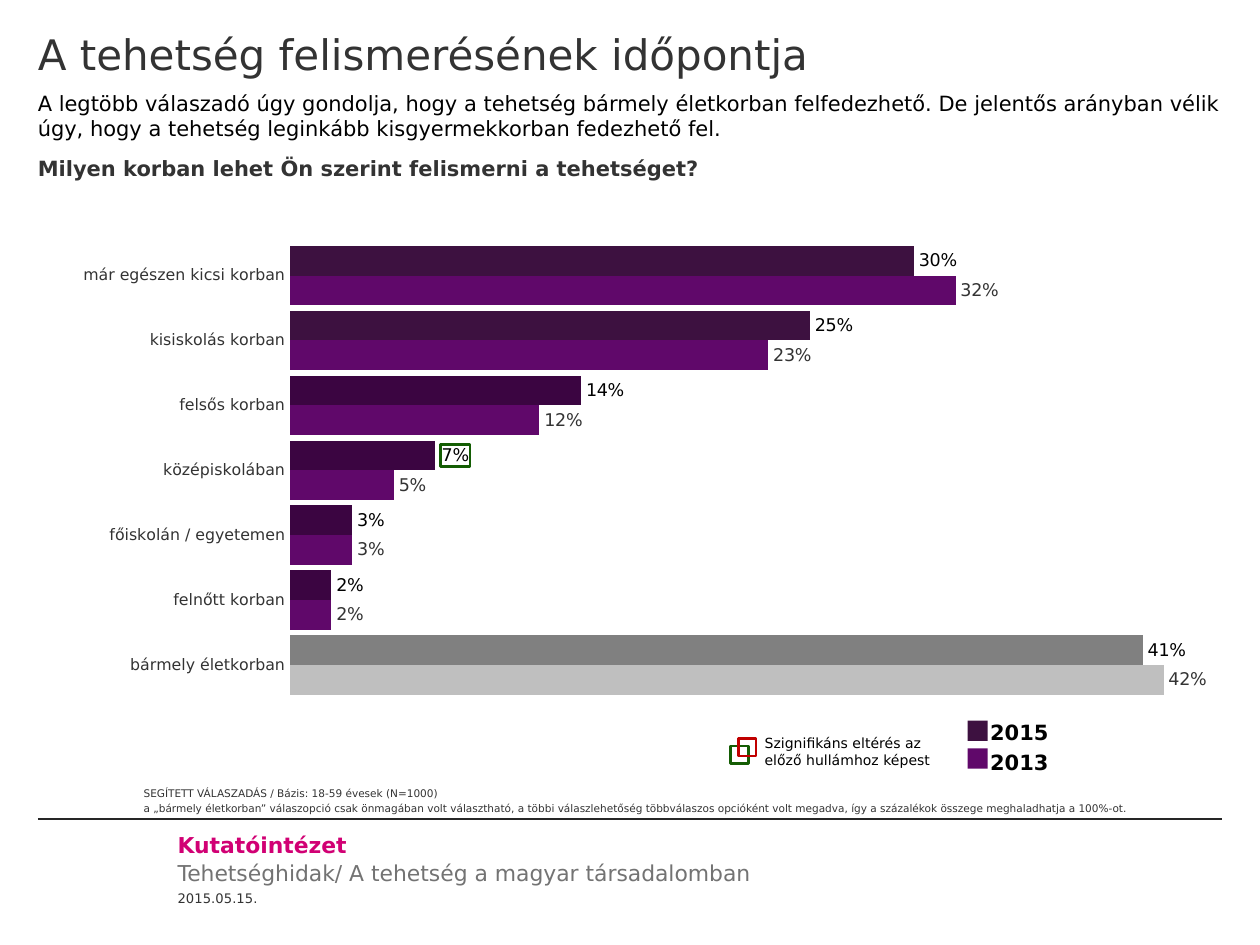
"""Build the slide on when talent can be recognised."""
import lxml.etree
import pptx
import pptx.chart.data
import pptx.dml.color
import pptx.enum.chart
import pptx.enum.shapes
import pptx.enum.text
import pptx.oxml
import pptx.oxml.ns
import pptx.util

Inches = pptx.util.Inches
RGBColor = pptx.dml.color.RGBColor
Anchor = pptx.enum.text.MSO_ANCHOR

FONT = "DejaVu Sans"
BLACK = RGBColor(0x00, 0x00, 0x00)
WHITE = RGBColor(0xFF, 0xFF, 0xFF)
DARK = RGBColor(0x33, 0x33, 0x33)
RULE = RGBColor(0x26, 0x26, 0x26)
GRAY = RGBColor(0x73, 0x73, 0x73)
PINK = RGBColor(0xD1, 0x00, 0x74)
PLUM = RGBColor(0x3D, 0x11, 0x40)
DEEP_PLUM = RGBColor(0x3B, 0x05, 0x41)
PURPLE = RGBColor(0x60, 0x08, 0x6A)
MID_GRAY = RGBColor(0x80, 0x80, 0x80)
LIGHT_GRAY = RGBColor(0xBF, 0xBF, 0xBF)
GREEN = RGBColor(0x14, 0x5D, 0x04)
RED = RGBColor(0xC0, 0x00, 0x00)

PERCENT = '0"%"'
AGES = ["már egészen kicsi korban", "kisiskolás korban", "felsős korban",
        "középiskolában", "főiskolán / egyetemen", "felnőtt korban",
        "bármely életkorban"]
SERIES = [
    ("2015", [30, 25, 14, 7, 3, 2, 41],
     [PLUM] * 2 + [DEEP_PLUM] * 4 + [MID_GRAY], BLACK),
    ("2013", [32, 23, 12, 5, 3, 2, 42],
     [PURPLE] * 6 + [LIGHT_GRAY], DARK),
]
SIGNIFICANT_POINT = 3


def style_font(font, size, color, bold=False):
    """Set typeface, size, colour and weight."""
    font.name = FONT
    font.size = pptx.util.Pt(size)
    font.color.rgb = color
    font.bold = bold


def add_text(slide, place, lines, size, color, bold=False, insets=(0, 0, 0, 0),
             anchor=Anchor.TOP, line_spacing=None, space_before=0):
    """Add a wrapped text box with one paragraph per line."""
    box = slide.shapes.add_textbox(*map(Inches, place))
    frame = box.text_frame
    frame.text = "\n".join(lines)
    frame.word_wrap = True
    frame.vertical_anchor = anchor
    (frame.margin_left, frame.margin_top,
     frame.margin_right, frame.margin_bottom) = map(Inches, insets)
    for index, para in enumerate(frame.paragraphs):
        para.line_spacing = line_spacing
        if index:
            para.space_before = pptx.util.Pt(space_before)
        for span in para.runs:
            style_font(span.font, size, color, bold)


def add_square(slide, left, top, side, fill=None, line=None):
    """Add a square with an optional fill and outline."""
    square = slide.shapes.add_shape(
        pptx.enum.shapes.MSO_SHAPE.RECTANGLE,
        *map(Inches, (left, top, side, side)))
    square.shadow.inherit = False
    if fill is None:
        square.fill.background()
    else:
        square.fill.solid()
        square.fill.fore_color.rgb = fill
    if line is None:
        square.line.fill.background()
    else:
        square.line.color.rgb = line
        square.line.width = pptx.util.Pt(1.5)


def add_rule(slide, left, right, top):
    """Add the thin horizontal line above the footer."""
    rule = slide.shapes.add_connector(
        pptx.enum.shapes.MSO_CONNECTOR.STRAIGHT,
        *map(Inches, (left, top, right, top)))
    rule.line.color.rgb = RULE
    rule.line.width = pptx.util.Pt(0.75)
    lxml.etree.SubElement(rule._element.spPr, pptx.oxml.ns.qn("a:effectLst"))


def set_plot_layout(chart, left, top, width, height):
    """Fix the inner plot area as fractions of the chart."""
    plot_area = chart._chartSpace.chart.plotArea
    for old in plot_area.findall(pptx.oxml.ns.qn("c:layout")):
        plot_area.remove(old)
    plot_area.insert(0, pptx.oxml.parse_xml(
        f'<c:layout {pptx.oxml.ns.nsdecls("c")}><c:manualLayout>'
        '<c:layoutTarget val="inner"/>'
        '<c:xMode val="edge"/><c:yMode val="edge"/>'
        f'<c:x val="{left}"/><c:y val="{top}"/>'
        f'<c:w val="{width}"/><c:h val="{height}"/>'
        '</c:manualLayout></c:layout>'))


def frame_label(point, color):
    """Draw a coloured outline around one data label."""
    label = point.data_label
    style_font(label.font, 10, BLACK)
    label.position = pptx.enum.chart.XL_LABEL_POSITION.OUTSIDE_END
    names = pptx.oxml.ns.nsdecls("c", "a")
    text_style = label._dLbl.find(pptx.oxml.ns.qn("c:txPr"))
    text_style.addprevious(pptx.oxml.parse_xml(
        f'<c:numFmt {names} formatCode="0&quot;%&quot;" sourceLinked="0"/>'))
    text_style.addprevious(pptx.oxml.parse_xml(
        f'<c:spPr {names}><a:ln w="19050"><a:solidFill>'
        f'<a:srgbClr val="{color}"/></a:solidFill></a:ln></c:spPr>'))


def style_series(series, colors, label_color):
    """Colour each bar and show its value at the end."""
    series.format.fill.solid()
    series.format.fill.fore_color.rgb = colors[0]
    for index, color in enumerate(colors):
        fill = series.points[index].format.fill
        fill.solid()
        fill.fore_color.rgb = color
    labels = series.data_labels
    labels.show_value = True
    labels.number_format = PERCENT
    labels.number_format_is_linked = False
    labels.position = pptx.enum.chart.XL_LABEL_POSITION.OUTSIDE_END
    style_font(labels.font, 10, label_color)


def add_age_chart(slide):
    """Add the clustered bars for both survey years."""
    data = pptx.chart.data.CategoryChartData(number_format=PERCENT)
    data.categories = AGES
    for name, values, _, _ in SERIES:
        data.add_series(name, values)
    chart = slide.shapes.add_chart(
        pptx.enum.chart.XL_CHART_TYPE.BAR_CLUSTERED,
        *map(Inches, (0.05, 1.44, 9.7, 4.66)), data).chart
    style_font(chart.font, 10, DARK)
    chart.has_legend = False
    chart.has_title = False
    set_plot_layout(chart, 0.232, 0.105, 0.766, 0.774)
    plot = chart.plots[0]
    plot.gap_width = 19
    plot.overlap = 0
    plot.vary_by_categories = False
    ages = chart.category_axis
    ages.reverse_order = True
    ages.major_tick_mark = pptx.enum.chart.XL_TICK_MARK.NONE
    ages.format.line.fill.background()
    style_font(ages.tick_labels.font, 9, DARK)
    shares = chart.value_axis
    shares.minimum_scale = 0
    shares.maximum_scale = 45
    shares.has_major_gridlines = False
    shares.visible = False
    for series, (_, _, colors, label_color) in zip(plot.series, SERIES):
        style_series(series, colors, label_color)
    frame_label(plot.series[0].points[SIGNIFICANT_POINT], GREEN)


def add_legend(slide):
    """Add the year keys and the significance key."""
    for index, (_, _, colors, _) in enumerate(SERIES):
        add_square(slide, 7.68, 5.72 + 0.22 * index, 0.16, colors[0])
    add_text(slide, (7.76, 5.62, 0.99, 0.59), [row[0] for row in SERIES], 12,
             BLACK, True, (0.1, 0.05, 0.1, 0.05), line_spacing=1.2)
    add_square(slide, 5.8, 5.92, 0.14, WHITE, GREEN)
    add_square(slide, 5.86, 5.86, 0.14, line=RED)
    add_text(slide, (5.97, 5.78, 1.58, 0.37),
             ["Szignifikáns eltérés az előző hullámhoz képest"], 8, BLACK,
             insets=(0.1, 0.05, 0.1, 0.05))


def add_footer(slide):
    """Add the rule, institute, project and date."""
    insets = (0.55, 0.1, 0.1, 0.05)
    add_rule(slide, 0.3, 9.7, 6.5)
    add_text(slide, (0.86, 6.5, 5.35, 0.41), ["Kutatóintézet"], 12.5, PINK,
             True, insets)
    add_text(slide, (0.86, 6.72, 5.35, 0.41),
             ["Tehetséghidak/ A tehetség a magyar társadalomban"], 12.5, GRAY,
             insets=insets)
    add_text(slide, (1.41, 7.1, 1.1, 0.09), ["2015.05.15."], 7.5, DARK,
             anchor=Anchor.BOTTOM)


def main():
    """Build and save the deck."""
    deck = pptx.Presentation()
    deck.slide_width, deck.slide_height = Inches(10), Inches(7.5)
    page = deck.slides.add_slide(deck.slide_layouts[6])
    add_footer(page)
    add_text(page, (0, 0, 10, 1.13), ["A tehetség felismerésének időpontja"],
             24, DARK, insets=(0.3, 0.23, 0.3, 0))
    add_age_chart(page)
    add_text(page, (1.14, 6.25, 8.29, 0.24), [
        "SEGÍTETT VÁLASZADÁS / Bázis: 18-59 évesek (N=1000)",
        "a „bármely életkorban” válaszopció csak önmagában volt választható, "
        "a többi válaszlehetőség többválaszos opcióként volt megadva, "
        "így a százalékok összege meghaladhatja a 100%-ot."],
        6, DARK, space_before=1.2)
    add_text(page, (0, 1.02, 9.68, 0.52),
             ["Milyen korban lehet Ön szerint felismerni a tehetséget?"], 12,
             DARK, True, (0.3, 0.23, 0.3, 0))
    add_text(page, (0, 0.67, 10, 0.75), [
        "A legtöbb válaszadó úgy gondolja, hogy a tehetség bármely életkorban "
        "felfedezhető. De jelentős arányban vélik úgy, hogy a tehetség "
        "leginkább kisgyermekkorban fedezhető fel."], 12, BLACK,
        insets=(0.3, 0.05, 0.3, 0.05))
    add_legend(page)
    deck.save("out.pptx")


if __name__ == "__main__":
    main()
